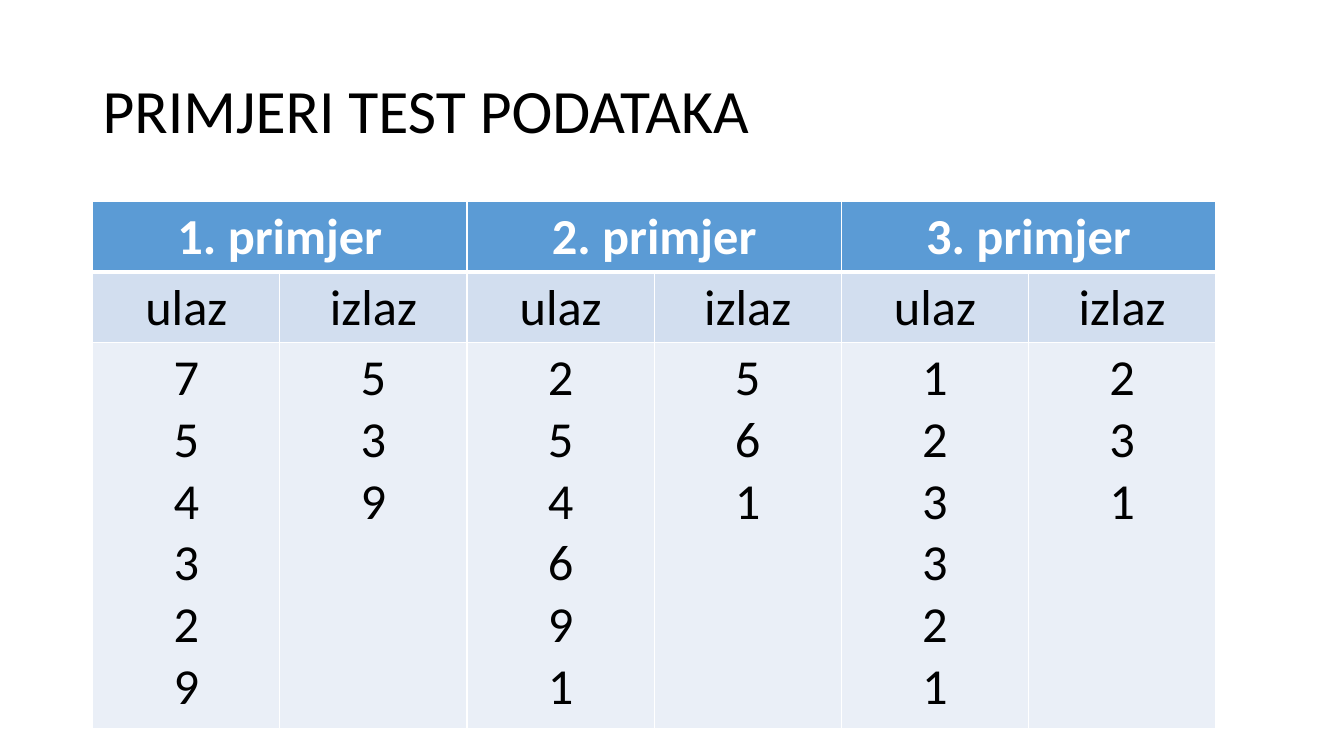
"""Build a slide with a table of test data examples."""
import pptx
import pptx.dml.color
import pptx.enum.text
import pptx.util
from lxml import etree
from pptx.oxml.ns import qn

COLORS = {
    "text": "000000",
    "white": "FFFFFF",
    "header": "5B9BD5",
    "labels": "D2DEEF",
    "data": "EAEFF7",
}
FONT = "Calibri"
EXAMPLES = [("754329", "539"), ("254691", "561"), ("123321", "231")]
LEFT = 66.24
COLUMN_WIDTH = 133.7
ROW_HEIGHTS = [44.64, 44.64, 275.76]


def rgb(name):
    return pptx.dml.color.RGBColor.from_string(COLORS[name])


def add_run(paragraph, text, size, color, bold=False):
    run = paragraph.add_run()
    run.text = text
    run.font.name = FONT
    run.font.size = pptx.util.Pt(size)
    run.font.bold = bold
    run.font.color.rgb = rgb(color)


def add_title(slide, text):
    title = slide.shapes.add_textbox(
        pptx.util.Pt(LEFT), pptx.util.Pt(28.8), pptx.util.Pt(828), pptx.util.Pt(104.4)
    )
    frame = title.text_frame
    frame.word_wrap = True
    frame.vertical_anchor = pptx.enum.text.MSO_ANCHOR.MIDDLE
    heading = frame.paragraphs[0]
    heading.line_spacing = 0.9
    add_run(heading, text, 44, "text")


def add_borders(cell, top, bottom):
    properties = cell._tc.get_or_add_tcPr()
    for side, width in (("L", 1), ("R", 1), ("T", top), ("B", bottom)):
        line = etree.SubElement(properties, qn(f"a:ln{side}"), w=str(pptx.util.Pt(width)))
        solid = etree.SubElement(line, qn("a:solidFill"))
        etree.SubElement(solid, qn("a:srgbClr"), val=COLORS["white"])


def style_cell(cell, fill, top=1, bottom=1):
    add_borders(cell, top, bottom)
    cell.fill.solid()
    cell.fill.fore_color.rgb = rgb(fill)


def write_cell(cell, lines, color="text", bold=False):
    frame = cell.text_frame
    for index, line in enumerate(lines):
        paragraph = frame.add_paragraph() if index else frame.paragraphs[0]
        paragraph.alignment = pptx.enum.text.PP_ALIGN.CENTER
        add_run(paragraph, line, 36, color, bold)


def add_examples_table(slide, examples):
    column_count = 2 * len(examples)
    table = slide.shapes.add_table(
        len(ROW_HEIGHTS), column_count, pptx.util.Pt(LEFT), pptx.util.Pt(144),
        pptx.util.Pt(COLUMN_WIDTH * column_count), pptx.util.Pt(sum(ROW_HEIGHTS)),
    ).table
    for row, height in zip(table.rows, ROW_HEIGHTS):
        row.height = pptx.util.Pt(height)
    for column_index, column in enumerate(table.columns):
        column.width = pptx.util.Pt(COLUMN_WIDTH)
        style_cell(table.cell(0, column_index), "header", bottom=3)
        style_cell(table.cell(1, column_index), "labels", top=3)
        style_cell(table.cell(2, column_index), "data")

    for number, example in enumerate(examples, start=1):
        first = 2 * (number - 1)
        header = table.cell(0, first)
        header.merge(table.cell(0, first + 1))
        write_cell(header, [f"{number}. primjer"], "white", True)
        for offset, (label, values) in enumerate(zip(("ulaz", "izlaz"), example)):
            write_cell(table.cell(1, first + offset), [label])
            write_cell(table.cell(2, first + offset), values)


def main():
    presentation = pptx.Presentation()
    presentation.slide_width = pptx.util.Pt(960)
    presentation.slide_height = pptx.util.Pt(540)
    slide = presentation.slides.add_slide(presentation.slide_layouts[6])
    add_title(slide, "PRIMJERI TEST PODATAKA")
    add_examples_table(slide, EXAMPLES)
    presentation.save("out.pptx")


if __name__ == "__main__":
    main()
